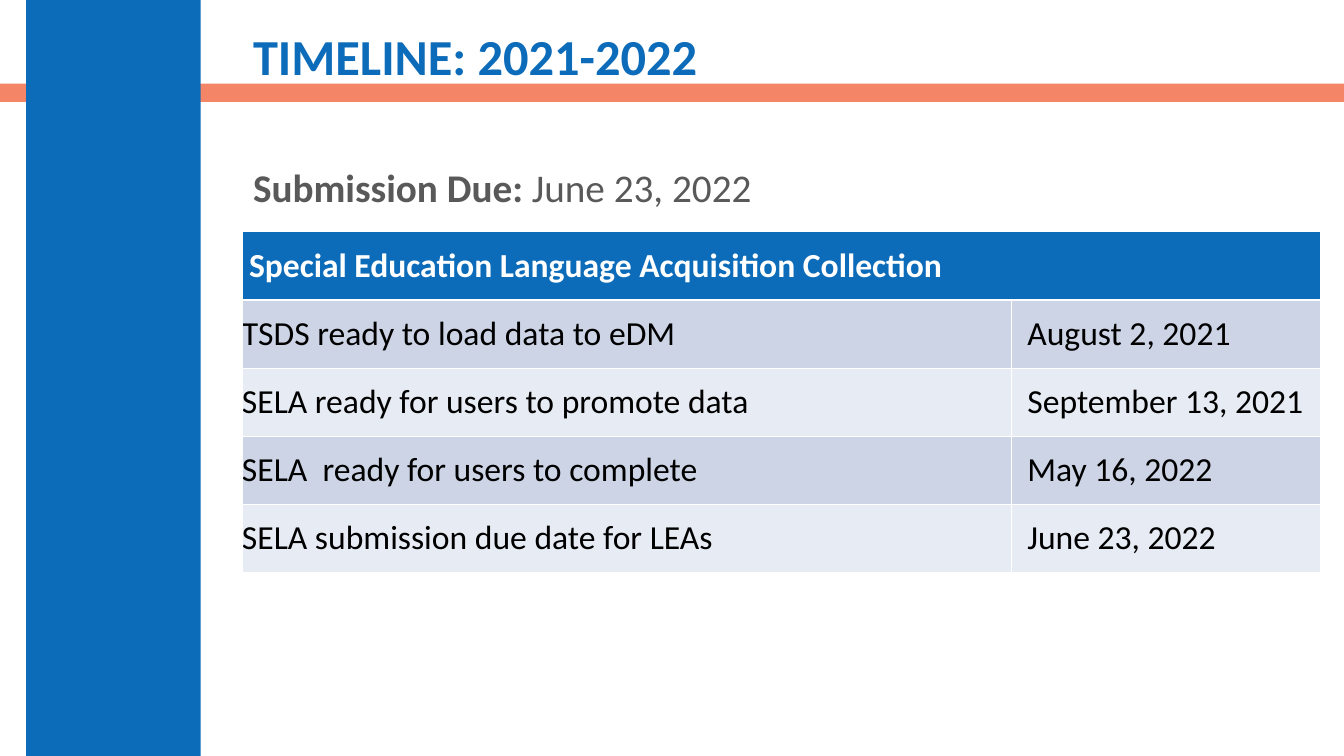
import pptx
import pptx.dml.color
import pptx.enum.shapes
import pptx.enum.text
import pptx.oxml
import pptx.oxml.ns
import pptx.util

Inches = pptx.util.Inches
Pt = pptx.util.Pt
MIDDLE = pptx.enum.text.MSO_ANCHOR.MIDDLE

COLORS = {
    "blue": "0D6CB9",
    "orange": "F16038",
    "gray": "595959",
    "white": "FFFFFF",
    "black": "000000",
    "band_dark": "CCD4E6",
    "band_light": "E7EBF3",
}


def rgb(name):
    return pptx.dml.color.RGBColor.from_string(COLORS[name])


def style_font(paragraph, size, color, bold=None):
    paragraph.font.name = "Calibri"
    paragraph.font.size = Pt(size)
    paragraph.font.bold = bold
    paragraph.font.color.rgb = rgb(color)


deck = pptx.Presentation()
deck.slide_width, deck.slide_height = Inches(13.33), Inches(7.5)
slide = deck.slides.add_slide(deck.slide_layouts[1])

# Crossing bands, placed behind the placeholders
bands = [
    ("orange", 0, 0.83, 13.33, 0.18),
    ("blue", 0.26, 0, 1.73, 7.5),
]
for depth, (color, *box) in enumerate(bands):
    band = slide.shapes.add_shape(
        pptx.enum.shapes.MSO_SHAPE.RECTANGLE, *map(Inches, box))
    band.shadow.inherit = False
    band.fill.solid()
    band.fill.fore_color.rgb = rgb(color)
    band.line.fill.background()
    if color == "orange":
        tint = band.fill._xPr.find(".//" + pptx.oxml.ns.qn("a:srgbClr"))
        tint.append(pptx.oxml.parse_xml(
            f'<a:alpha {pptx.oxml.ns.nsdecls("a")} val="76000"/>'))
    slide.shapes._spTree.insert(2 + depth, band._element)

# Title
title = slide.shapes.title
title.left, title.top = Inches(2.41), Inches(0.18)
title.width, title.height = Inches(10.53), Inches(0.82)
title.text_frame.text = "TIMELINE: 2021-2022"
title.text_frame.vertical_anchor = MIDDLE
title.text_frame.auto_size = pptx.enum.text.MSO_AUTO_SIZE.NONE
heading = title.text_frame.paragraphs[0]
heading.alignment = pptx.enum.text.PP_ALIGN.LEFT
heading.line_spacing = 0.9
style_font(heading, 36, "blue", True)

# Submission due date
due = slide.placeholders[1]
due.left, due.top = Inches(2.41), Inches(1.62)
due.width, due.height = Inches(9.83), Inches(4.76)
due.text_frame.auto_size = pptx.enum.text.MSO_AUTO_SIZE.NONE
due_line = due.text_frame.paragraphs[0]
due_props = due_line._p.get_or_add_pPr()
due_props.set("marL", "0")
due_props.set("indent", "0")
due_props.append(pptx.oxml.parse_xml(
    f'<a:buNone {pptx.oxml.ns.nsdecls("a")}/>'))
due_line.line_spacing = 0.9
due_line.space_before = Pt(0)
due_label = due_line.add_run()
due_label.text = "Submission Due: "
due_label.font.bold = True
due_line.add_run().text = "June 23, 2022"
style_font(due_line, 28, "gray")

# Timeline table
milestones = [
    ("Special Education Language Acquisition Collection", ""),
    ("TSDS ready to load data to eDM", "August 2, 2021"),
    ("SELA ready for users to promote data", "September 13, 2021"),
    ("SELA  ready for users to complete", "May 16, 2022"),
    ("SELA submission due date for LEAs", "June 23, 2022"),
]
timeline = slide.shapes.add_table(
    len(milestones), 2, Inches(2.4), Inches(2.3), Inches(10.7), Inches(3.38)).table
timeline.columns[0].width = Inches(7.63)
timeline.columns[1].width = Inches(3.07)
timeline.cell(0, 0).merge(timeline.cell(0, 1))

for row, milestone in enumerate(milestones):
    is_header = row == 0
    fill = "blue" if is_header else ("band_light", "band_dark")[row % 2]
    for column, text in enumerate(milestone):
        cell = timeline.cell(row, column)
        cell.fill.solid()
        cell.fill.fore_color.rgb = rgb(fill)
        cell.vertical_anchor = MIDDLE
        cell.margin_top = cell.margin_right = cell.margin_bottom = 0
        cell.margin_left = Inches(0.07 if is_header else 0.16 * column)
        cell.text = text
        style_font(cell.text_frame.paragraphs[0], 24,
                   "white" if is_header else "black", is_header)

deck.save("out.pptx")
